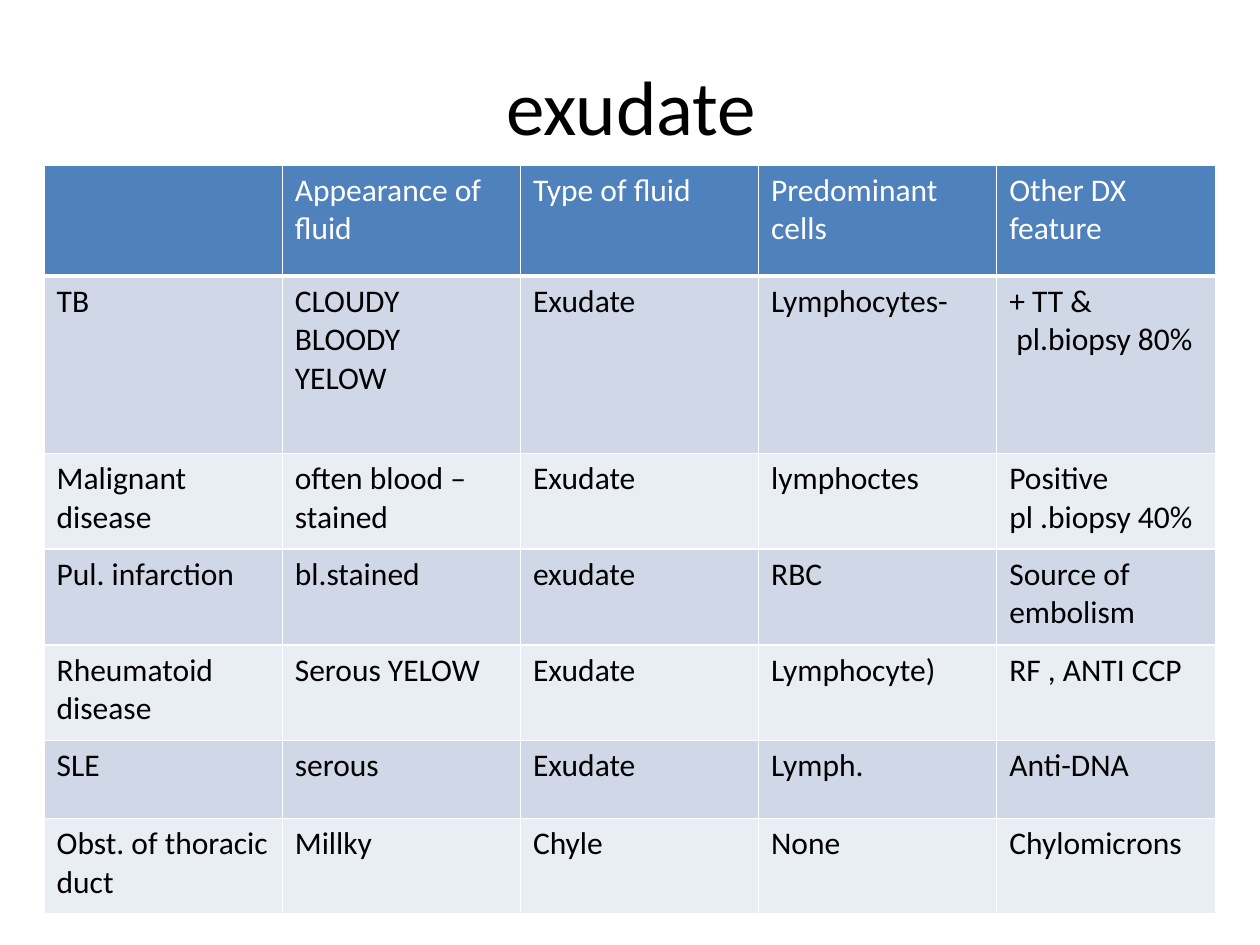
from lxml.etree import SubElement
from pptx import Presentation
from pptx.dml.color import RGBColor
from pptx.enum.text import MSO_ANCHOR, PP_ALIGN
from pptx.oxml.ns import qn
from pptx.util import Pt

FONT = "Calibri"
COLORS = {
    "text": "000000",
    "white": "FFFFFF",
    "header": "4F81BD",
    "odd": "D0D8E8",
    "even": "E9EDF4",
}
TITLE_BOX = (36.7, 15.1, 648, 90)
TABLE_BOX = (25.2, 94.3, 669.7, 428.2)
COLUMN_WIDTHS = [136.1] * 4 + [125.3]
ROW_HEIGHTS = [63.4, 101.5, 54.7, 54.7, 54.7, 44.5, 54.7]
ROWS = [
    ["", "Appearance of fluid", "Type of fluid", "Predominant cells", "Other DX feature"],
    ["TB", "CLOUDY BLOODY\nYELOW", "Exudate", "Lymphocytes-", "+ TT &\n pl.biopsy 80%"],
    ["Malignant disease", "often blood –stained", "Exudate", "lymphoctes",
     "Positive pl .biopsy 40%"],
    ["Pul. infarction", "bl.stained", "exudate", "RBC", "Source of embolism"],
    ["Rheumatoid disease", "Serous YELOW", "Exudate", "Lymphocyte)", "RF , ANTI CCP"],
    ["SLE", "serous", "Exudate", "Lymph.", "Anti-DNA"],
    ["Obst. of thoracic duct", "Millky", "Chyle", "None", "Chylomicrons"],
]


def rgb(name):
    """Return the named palette colour."""
    return RGBColor.from_string(COLORS[name])


def style_font(font, size, color):
    """Apply the slide's typeface with a size and colour."""
    font.name = FONT
    font.size = Pt(size)
    font.bold = False
    font.color.rgb = rgb(color)


def set_borders(cell, bottom):
    """Draw white borders, 1 pt wide except for the given bottom width."""
    tc_pr = cell._tc.get_or_add_tcPr()
    widths = {"a:lnL": 1, "a:lnR": 1, "a:lnT": 1, "a:lnB": bottom}
    for tag, width in widths.items():
        ln = SubElement(tc_pr, qn(tag), w=str(Pt(width)))
        fill = SubElement(ln, qn("a:solidFill"))
        SubElement(fill, qn("a:srgbClr"), val=COLORS["white"])


def add_title(slide, box, text):
    """Place the centred title in its placeholder."""
    sp = slide.shapes.title
    sp.left, sp.top, sp.width, sp.height = map(Pt, box)
    tf = sp.text_frame
    tf.text = text
    tf.vertical_anchor = MSO_ANCHOR.MIDDLE
    p = tf.paragraphs[0]
    p.alignment = PP_ALIGN.CENTER
    style_font(p.runs[0].font, 44, "text")


def fill_cell(cell, text, fill, color, bottom):
    """Write and format one table cell."""
    set_borders(cell, bottom)
    cell.fill.solid()
    cell.fill.fore_color.rgb = rgb(fill)
    cell.text_frame.text = text
    for p in cell.text_frame.paragraphs:
        style_font(p.font, 18, color)
        for r in p.runs:
            style_font(r.font, 18, color)


def add_fluid_table(slide, box):
    """Build the banded table of exudate causes."""
    table = slide.shapes.add_table(len(ROWS), len(ROWS[0]), *map(Pt, box)).table
    for column, width in zip(table.columns, COLUMN_WIDTHS):
        column.width = Pt(width)
    for i, (row, height) in enumerate(zip(table.rows, ROW_HEIGHTS)):
        row.height = Pt(height)
        if i == 0:
            fill, color, bottom = "header", "white", 3
        else:
            fill, color, bottom = ("odd" if i % 2 else "even"), "text", 1
        for cell, text in zip(row.cells, ROWS[i]):
            fill_cell(cell, text, fill, color, bottom)


def main():
    """Create the slide and save it."""
    prs = Presentation()
    prs.slide_width, prs.slide_height = Pt(720), Pt(540)
    slide = prs.slides.add_slide(prs.slide_layouts[5])
    add_title(slide, TITLE_BOX, "exudate")
    add_fluid_table(slide, TABLE_BOX)
    prs.save("out.pptx")


if __name__ == "__main__":
    main()
